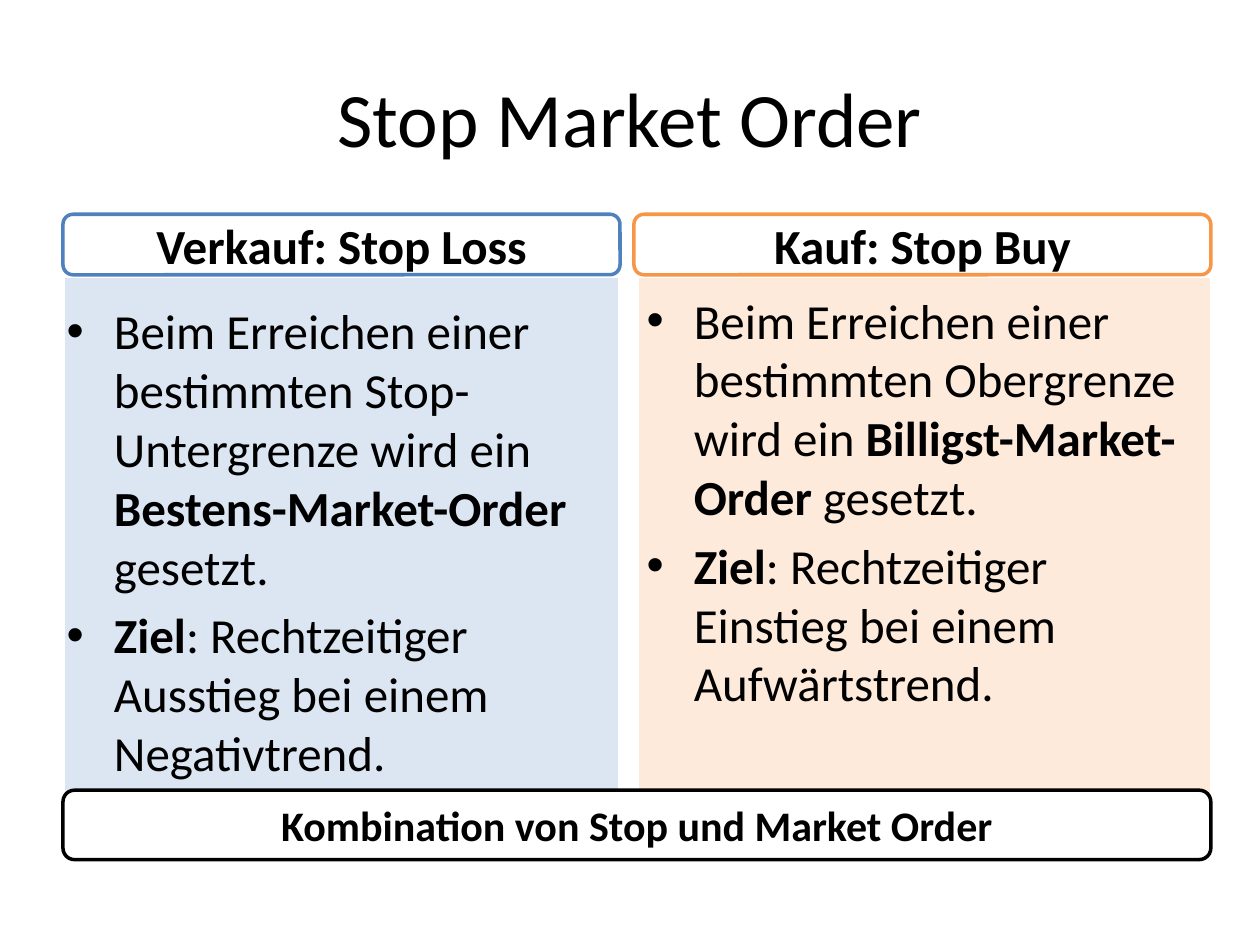
from pptx import Presentation
from pptx.dml.color import RGBColor
from pptx.enum import shapes, text
from pptx.util import Cm, Pt

FONT = "Calibri"
LEFT = 1.27
PANEL_TOP = 5.56
HEADER_TOP, HEADER_HEIGHT = 4.32, 1.22

COLUMNS = [
    dict(
        header="Verkauf: Stop Loss", accent="4F81BD", tint="DCE6F2",
        header_span=(LEFT, 11.23), panel_span=(LEFT, 11.23),
        body_box=(1.09, 5.94, 11.4, 13.11),
        points=[
            [("Beim Erreichen einer bestimmten Stop-Untergrenze wird ein ", False),
             ("Bestens-Market-Order ", True), ("gesetzt.", False)],
            [("Ziel", True),
             (": Rechtzeitiger Ausstieg bei einem Negativtrend.", False)],
        ],
    ),
    dict(
        header="Kauf: Stop Buy", accent="F79646", tint="FDEADA",
        header_span=(12.78, 11.63), panel_span=(12.85, 11.58),
        body_box=(12.78, 5.72, 11.35, 12.8),
        points=[
            [("Beim Erreichen einer bestimmten Obergrenze wird ein ", False),
             ("Billigst-Market-Order", True), (" gesetzt.", False)],
            [("Ziel", True),
             (": Rechtzeitiger Einstieg bei einem Aufwärtstrend.", False)],
        ],
    ),
]


def color(value):
    return RGBColor.from_string(value)


def style_font(font, size):
    font.name = FONT
    font.size = Pt(size)
    font.color.rgb = color("000000")


def add_box(slide, preset, box, fill, line):
    shape = slide.shapes.add_shape(preset, *map(Cm, box))
    shape.shadow.inherit = False
    shape.fill.solid()
    shape.fill.fore_color.rgb = color(fill)
    shape.line.color.rgb = color(line)
    shape.line.width = Pt(2)
    return shape


def add_panel(slide, span, tint):
    left, width = span
    panel = add_box(slide, shapes.MSO_SHAPE.RECTANGLE,
                    (left, PANEL_TOP, width, 10.97), tint, "FFFFFF")
    slide.shapes.title.element.addprevious(panel.element)


def add_label(slide, box, wording, line, size):
    label = add_box(slide, shapes.MSO_SHAPE.ROUNDED_RECTANGLE, box, "FFFFFF", line)
    frame = label.text_frame
    frame.word_wrap = True
    frame.vertical_anchor = text.MSO_ANCHOR.MIDDLE
    paragraph = frame.paragraphs[0]
    paragraph.text = wording
    paragraph.alignment = text.PP_ALIGN.CENTER
    style_font(paragraph.font, size)
    paragraph.font.bold = True


def fill_title(title, wording):
    title.left, title.top, title.width, title.height = map(Cm, (LEFT, 0.76, 22.86, 3.18))
    title.text_frame.text = wording
    style_font(title.text_frame.paragraphs[0].font, 44)


def fill_body(body, box, points):
    body.left, body.top, body.width, body.height = map(Cm, box)
    frame = body.text_frame
    for number, runs in enumerate(points):
        paragraph = frame.add_paragraph() if number else frame.paragraphs[0]
        if number == 0:
            paragraph.space_before = Pt(0)
        for wording, bold in runs:
            run = paragraph.add_run()
            run.text = wording
            if bold:
                run.font.bold = True
        style_font(paragraph.font, 28)


def main():
    deck = Presentation()
    deck.slide_width, deck.slide_height = Cm(25.4), Cm(19.05)
    slide = deck.slides.add_slide(deck.slide_layouts[3])
    fill_title(slide.shapes.title, "Stop Market Order")

    for index, column in enumerate(COLUMNS, start=1):
        add_panel(slide, column["panel_span"], column["tint"])
        fill_body(slide.placeholders[index], column["body_box"], column["points"])
        left, width = column["header_span"]
        add_label(slide, (left, HEADER_TOP, width, HEADER_HEIGHT),
                  column["header"], column["accent"], 28)

    add_label(slide, (LEFT, 15.93, 23.14, 1.4),
              "Kombination von Stop und Market Order", "000000", 24)
    deck.save("out.pptx")


if __name__ == "__main__":
    main()
